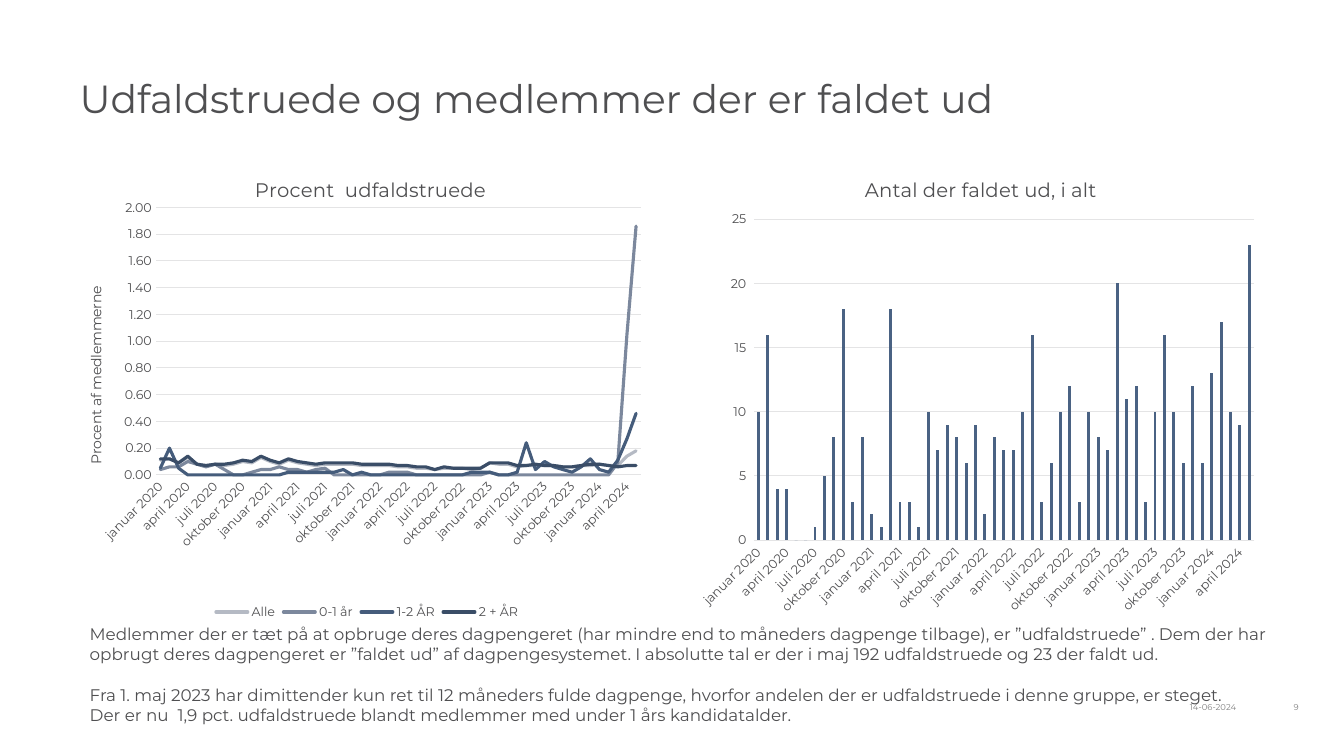
from itertools import product

from lxml.etree import SubElement
from pptx import Presentation
from pptx.chart.data import CategoryChartData
from pptx.dml.color import RGBColor
from pptx.enum.chart import XL_CHART_TYPE, XL_LEGEND_POSITION, XL_TICK_MARK
from pptx.enum.text import MSO_ANCHOR, PP_ALIGN
from pptx.oxml import parse_xml
from pptx.oxml.ns import nsdecls, qn
from pptx.util import Inches, Pt

FONT = "Montserrat"
TEXT = RGBColor(0x4F, 0x4F, 0x51)
FOOTER = RGBColor(0x80, 0x80, 0x80)
GRID = RGBColor(0xE4, 0xE4, 0xE5)
BAR = RGBColor(0x4A, 0x62, 0x83)
LINES = [
    RGBColor(0xB5, 0xBA, 0xC4),
    RGBColor(0x7C, 0x88, 0x9D),
    RGBColor(0x45, 0x5C, 0x7B),
    RGBColor(0x3A, 0x4D, 0x67),
]

MONTH_NAMES = ("januar februar marts april maj juni juli august "
               "september oktober november december").split()
# January 2020 to May 2024
MONTHS = [f"{m} {y}" for y, m in product(range(2020, 2025), MONTH_NAMES)][:53]

AT_RISK = {
    "Alle": [
        .11, .12, .09, .13, .08, .07, .08, .07, .08, .1, .09, .13,
        .1, .08, .11, .09, .08, .07, .08, .08, .08, .08, .07, .07,
        .07, .07, .06, .06, .05, .05, .04, .05, .05, .05, .04, .05,
        .09, .08, .08, .06, .07, .07, .07, .07, .06, .06, .07, .07,
        .08, .07, .07, .14, .18],
    "0-1 år": [
        .04, .06, .06, .1, .08, .06, .08, .04, 0, 0, .02, .04,
        .04, .06, .04, .04, .02, .04, .05, 0, 0, 0, 0, 0,
        0, .02, .02, .02, 0, 0, 0, 0, 0, 0, 0, 0,
        .02, 0, 0, 0, 0, 0, 0, 0, 0, 0, 0, 0,
        0, 0, .09, 1.05, 1.86],
    "1-2 ÅR": [
        .05, .2, .05, 0, 0, 0, 0, 0, 0, 0, 0, 0,
        0, 0, .02, .02, .02, .02, .02, .02, .04, 0, .02, 0,
        0, 0, 0, 0, 0, 0, 0, 0, 0, 0, .02, .02,
        .02, 0, 0, .02, .24, .04, .1, .06, .04, .02, .06, .12,
        .04, .02, .11, .27, .46],
    "2 + ÅR": [
        .12, .12, .09, .14, .08, .07, .08, .08, .09, .11, .1, .14,
        .11, .09, .12, .1, .09, .08, .09, .09, .09, .09, .08, .08,
        .08, .08, .07, .07, .06, .06, .04, .06, .05, .05, .05, .05,
        .09, .09, .09, .07, .07, .08, .07, .07, .06, .06, .07, .08,
        .08, .07, .06, .07, .07],
}
DROPPED_OUT = {
    "Series 1": [
        10, 16, 4, 4, 0, 0, 1, 5, 8, 18, 3, 8,
        2, 1, 18, 3, 3, 1, 10, 7, 9, 8, 6, 9,
        2, 8, 7, 7, 10, 16, 3, 6, 10, 12, 3, 10,
        8, 7, 20, 11, 12, 3, 10, 16, 10, 6, 12, 6,
        13, 17, 10, 9, 23],
}
NOTES = [
    "Medlemmer der er tæt på at opbruge deres dagpengeret (har mindre end to måneders "
    "dagpenge tilbage), er ”udfaldstruede” . Dem der har",
    "opbrugt deres dagpengeret er ”faldet ud” af dagpengesystemet. I absolutte tal er der "
    "i maj 192 udfaldstruede og 23 der faldt ud.",
    "Fra 1. maj 2023 har dimittender kun ret til 12 måneders fulde dagpenge, hvorfor "
    "andelen der er udfaldstruede i denne gruppe, er steget.",
    "Der er nu  1,9 pct. udfaldstruede blandt medlemmer med under 1 års kandidatalder.",
]


def style_font(font, size, color=TEXT):
    font.name, font.size, font.bold = FONT, Pt(size), False
    font.color.rgb = color


def write(p, text, size=12, color=TEXT, align=None, line_spacing=None, before=None):
    r = p.add_run()
    r.text = text
    style_font(r.font, size, color)
    p.alignment, p.line_spacing = align, line_spacing
    if before:
        p.space_before = Pt(before)


def place(el, x, y, w=None, h=None):
    """Give a chart title or plot area a manual layout, in fractions of the chart."""
    old = el.find(qn("c:layout"))
    if old is not None:
        el.remove(old)
    layout = parse_xml(f"<c:layout {nsdecls('c')}><c:manualLayout/></c:layout>")
    values = {"xMode": "edge", "yMode": "edge", "x": x, "y": y}
    if w:
        values = {"layoutTarget": "inner", **values, "w": w, "h": h}
    for name, value in values.items():
        SubElement(layout[0], qn(f"c:{name}")).set("val", str(value))
    el.insert(0 if el.find(qn("c:tx")) is None else 1, layout)


class SlideBuilder:
    def __init__(self, prs):
        self.s = prs.slides.add_slide(prs.slide_layouts[6])

    def text(self, box, lines, gaps=None, anchor=MSO_ANCHOR.TOP, **fmt):
        """Add a text box; gaps maps a line's index to its space before in points."""
        tf = self.s.shapes.add_textbox(*map(Inches, box)).text_frame
        tf.word_wrap, tf.vertical_anchor = True, anchor
        tf.margin_left = tf.margin_top = tf.margin_right = tf.margin_bottom = 0
        for i, line in enumerate(lines):
            p = tf.add_paragraph() if i else tf.paragraphs[0]
            write(p, line, before=(gaps or {}).get(i), **fmt)

    def chart(self, left, kind, title, series, plot_box, top_value, step, fmt):
        data = CategoryChartData()
        data.categories = MONTHS
        for name, values in series.items():
            data.add_series(name, values)
        box = map(Inches, (left, 1.5, 5.74, 4.69))
        chart = self.s.shapes.add_chart(kind, *box, data).chart
        style_font(chart.font, 10)
        chart.has_legend = False
        chart.has_title = True
        write(chart.chart_title.text_frame.paragraphs[0], title, size=14)
        place(chart.chart_title._element, 0.3, 0.045)
        place(chart._chartSpace.chart.plotArea, *plot_box)
        chart.plots[0].vary_by_categories = False
        self.axes(chart, top_value, step, fmt)
        return chart

    def axes(self, chart, top_value, step, fmt):
        cat, val = chart.category_axis, chart.value_axis
        for axis in (cat, val):
            axis.major_tick_mark = axis.minor_tick_mark = XL_TICK_MARK.NONE
            style_font(axis.tick_labels.font, 9)
        for line in (cat.format.line, val.major_gridlines.format.line):
            line.color.rgb, line.width = GRID, Pt(0.75)
        val.format.line.fill.background()
        val.minimum_scale, val.maximum_scale, val.major_unit = 0, top_value, step
        val.tick_labels.number_format = fmt
        val.tick_labels.number_format_is_linked = False
        body = cat._element.find(f"{qn('c:txPr')}/{qn('a:bodyPr')}")
        body.set("rot", "-2700000")
        body.set("vert", "horz")
        skip = parse_xml(f"<c:tickLblSkip {nsdecls('c')} val='3'/>")
        cat._element.find(qn("c:noMultiLvlLbl")).addprevious(skip)

    def line_chart(self):
        chart = self.chart(0.77, XL_CHART_TYPE.LINE, "Procent  udfaldstruede", AT_RISK,
                           (0.135, 0.119, 0.838, 0.566), 2, 0.2, "0.00")
        for series, color in zip(chart.plots[0].series, LINES):
            series.smooth = False
            series.format.line.color.rgb, series.format.line.width = color, Pt(2.25)
            series.format.line._get_or_add_ln().set("cap", "rnd")
        title = chart.value_axis.axis_title
        write(title.text_frame.paragraphs[0], "Procent af medlemmerne", size=10)
        body = title.text_frame._txBody.bodyPr
        body.set("rot", "-5400000")
        body.set("vert", "horz")
        place(title._element, 0.01, 0.28)
        chart.has_legend = True
        chart.legend.position = XL_LEGEND_POSITION.BOTTOM
        chart.legend.include_in_layout = False
        style_font(chart.legend.font, 9)

    def column_chart(self):
        chart = self.chart(6.82, XL_CHART_TYPE.COLUMN_CLUSTERED, "Antal der faldet ud, i alt",
                           DROPPED_OUT, (0.114, 0.144, 0.865, 0.679), 25, 5,
                           r"#,##0_);\(#,##0\)")
        plot = chart.plots[0]
        plot.gap_width, plot.overlap = 219, -27
        fill = plot.series[0].format.fill
        fill.solid()
        fill.fore_color.rgb = BAR


def main():
    prs = Presentation()
    prs.slide_width, prs.slide_height = Inches(13.33), Inches(7.5)
    s = SlideBuilder(prs)
    s.text((0.79, 0.79, 10.76, 1.1), ["Udfaldstruede og medlemmer der er faldet ud"],
           size=28, line_spacing=0.9)
    for left, width, label in ((10.68, 1.58, "14-06-2024"), (12.4, 0.48, "9")):
        s.text((left, 6.71, width, 0.36), [label], anchor=MSO_ANCHOR.BOTTOM,
               size=6, color=FOOTER, align=PP_ALIGN.RIGHT)
    s.line_chart()
    s.column_chart()
    s.text((0.89, 6.19, 11.74, 1.1), NOTES, gaps={2: 14.6})
    prs.save("out.pptx")


if __name__ == "__main__":
    main()
